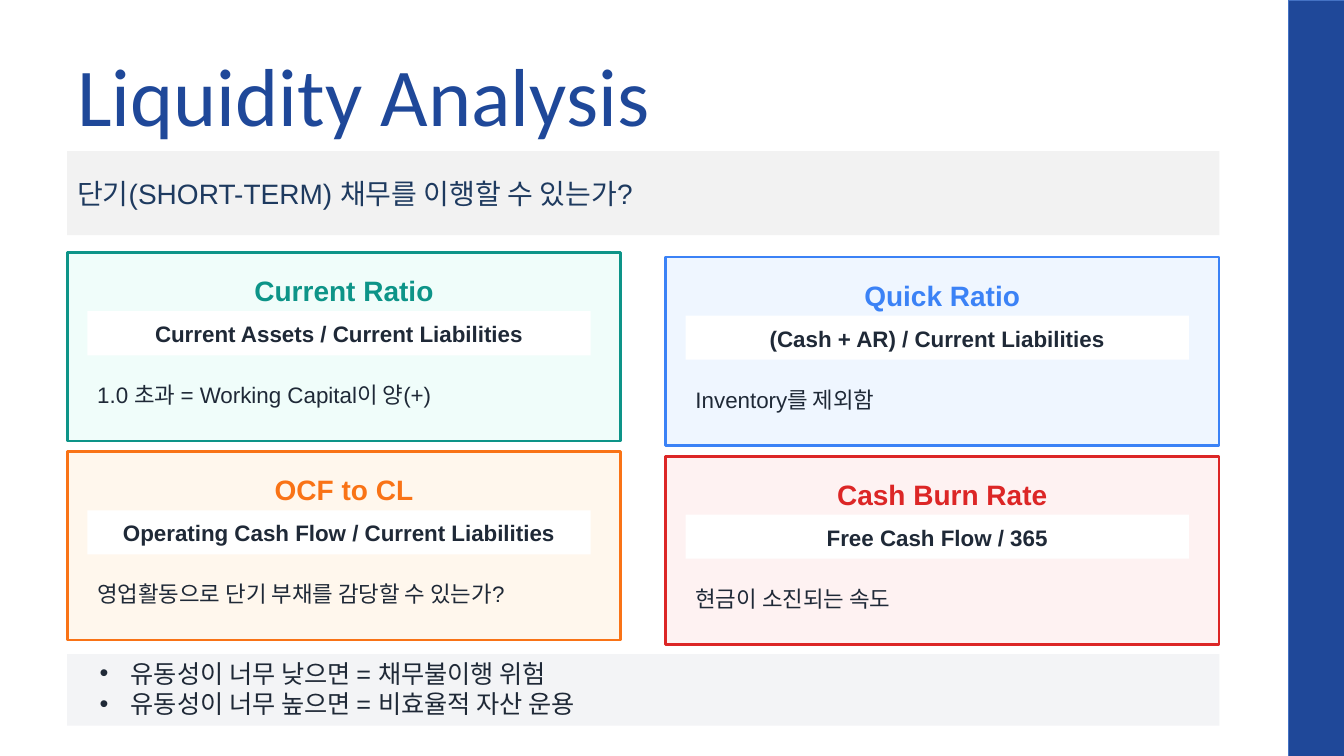
"""Build the Liquidity Analysis slide with four ratio cards."""
from lxml.etree import SubElement
from pptx import Presentation
from pptx.dml.color import RGBColor
from pptx.enum.shapes import MSO_SHAPE
from pptx.enum.text import MSO_ANCHOR, MSO_AUTO_SIZE, PP_ALIGN
from pptx.oxml.ns import qn
from pptx.util import Pt

NAVY = RGBColor(0x1F, 0x48, 0x99)
SIDEBAR_EDGE = RGBColor(0x44, 0x72, 0xC4)
QUESTION_BLUE = RGBColor(0x1E, 0x3A, 0x5F)
INK = RGBColor(0x1F, 0x29, 0x37)
WHITE = RGBColor(0xFF, 0xFF, 0xFF)
BANNER_GRAY = RGBColor(0xF2, 0xF2, 0xF2)
FOOTER_GRAY = RGBColor(0xF3, 0xF4, 0xF6)
TEAL, MINT = RGBColor(0x0D, 0x94, 0x88), RGBColor(0xF0, 0xFD, 0xFA)
BLUE, ICE = RGBColor(0x3B, 0x82, 0xF6), RGBColor(0xEF, 0xF6, 0xFF)
ORANGE, CREAM = RGBColor(0xF9, 0x73, 0x16), RGBColor(0xFF, 0xF7, 0xED)
RED, ROSE = RGBColor(0xDC, 0x26, 0x26), RGBColor(0xFE, 0xF2, 0xF2)

TITLE = "Liquidity Analysis"
QUESTION = "단기(SHORT-TERM) 채무를 이행할 수 있는가?"
RATIOS = [
    ("Current Ratio", "Current Assets / Current Liabilities",
     "1.0 초과 = Working Capital이 양(+)", TEAL, MINT),
    ("Quick Ratio", "(Cash + AR) / Current Liabilities",
     "Inventory를 제외함", BLUE, ICE),
    ("OCF to CL", "Operating Cash Flow / Current Liabilities",
     "영업활동으로 단기 부채를 감당할 수 있는가?", ORANGE, CREAM),
    ("Cash Burn Rate", "Free Cash Flow / 365",
     "현금이 소진되는 속도", RED, ROSE),
]
TAKEAWAYS = [
    "유동성이 너무 낮으면 = 채무불이행 위험",
    "유동성이 너무 높으면 = 비효율적 자산 운용",
]

LEFT, FULL_WIDTH = 48, 823
CARD_TOP, CARD_WIDTH, CARD_HEIGHT = 180.5, 395.5, 134.5
COLUMN_STEP, ROW_STEP, RIGHT_DROP = 427.3, 142.2, 3.1
INSET, INNER_WIDTH = 14.4, 359.5
BULLET_INDENT = 22.3


def write(shape, text, size=16, color=INK, font="Arial", bold=False,
          align=PP_ALIGN.LEFT, bullet=False):
    """Fill a shape with one paragraph per line of text."""
    frame = shape.text_frame
    frame.word_wrap = True
    frame.auto_size = MSO_AUTO_SIZE.NONE
    frame.vertical_anchor = MSO_ANCHOR.MIDDLE
    for index, line in enumerate(text.split("\n")):
        paragraph = frame.add_paragraph() if index else frame.paragraphs[0]
        paragraph.alignment = align
        if bullet:
            properties = paragraph._p.get_or_add_pPr()
            properties.set("marL", str(Pt(BULLET_INDENT)))
            properties.set("indent", str(-Pt(BULLET_INDENT)))
            SubElement(properties, qn("a:buFont")).set("typeface", "Arial")
            SubElement(properties, qn("a:buChar")).set("char", "•")
        run = paragraph.add_run()
        run.text = line
        run.font.size = Pt(size)
        run.font.name = font
        run.font.bold = bold
        run.font.color.rgb = color


def add_panel(slide, left, top, width, height, fill, edge=None, weight=2):
    """Add a flat rectangle with an optional outline."""
    panel = slide.shapes.add_shape(
        MSO_SHAPE.RECTANGLE, Pt(left), Pt(top), Pt(width), Pt(height))
    panel.shadow.inherit = False
    panel.fill.solid()
    panel.fill.fore_color.rgb = fill
    if edge is None:
        panel.line.fill.background()
    else:
        panel.line.color.rgb = edge
        panel.line.width = Pt(weight)
    return panel


def add_label(slide, left, top, width, height, text, **style):
    """Add a text box holding formatted text."""
    label = slide.shapes.add_textbox(Pt(left), Pt(top), Pt(width), Pt(height))
    write(label, text, **style)


def add_card(slide, left, top, name, formula, meaning, accent, tint):
    """Add one ratio card with its name, formula and meaning."""
    inner = left + INSET
    add_panel(slide, left, top, CARD_WIDTH, CARD_HEIGHT, tint, edge=accent)
    add_label(slide, left, top + 13.3, CARD_WIDTH, 27.4, name, size=20,
              color=accent, bold=True, align=PP_ALIGN.CENTER)
    add_panel(slide, inner, top + 41.8, INNER_WIDTH, 31.5, WHITE)
    add_label(slide, inner, top + 46.2, INNER_WIDTH, 23.6, formula,
              bold=True, align=PP_ALIGN.CENTER)
    add_label(slide, inner, top + 76, INNER_WIDTH, 51, meaning)


def main():
    """Assemble the slide and save it."""
    deck = Presentation()
    deck.slide_width, deck.slide_height = Pt(960), Pt(540)
    slide = deck.slides.add_slide(deck.slide_layouts[5])

    add_panel(slide, 920, 0, 40, 540, NAVY, edge=SIDEBAR_EDGE, weight=0.5)
    title = slide.shapes.title
    title.left, title.top = Pt(LEFT), Pt(21.6)
    title.width, title.height = Pt(864), Pt(90)
    write(title, TITLE, size=58.7, color=NAVY, font="Calibri")

    banner = add_panel(slide, LEFT, 108, FULL_WIDTH, 60, BANNER_GRAY)
    write(banner, QUESTION, size=20, color=QUESTION_BLUE)

    for index, ratio in enumerate(RATIOS):
        row, column = divmod(index, 2)
        add_card(slide, LEFT + column * COLUMN_STEP,
                 CARD_TOP + row * ROW_STEP + column * RIGHT_DROP, *ratio)

    add_panel(slide, LEFT, 467.3, FULL_WIDTH, 51, FOOTER_GRAY)
    add_label(slide, 64, 477.6, 777, 28, "\n".join(TAKEAWAYS),
              size=18, bullet=True)
    deck.save("out.pptx")


if __name__ == "__main__":
    main()
